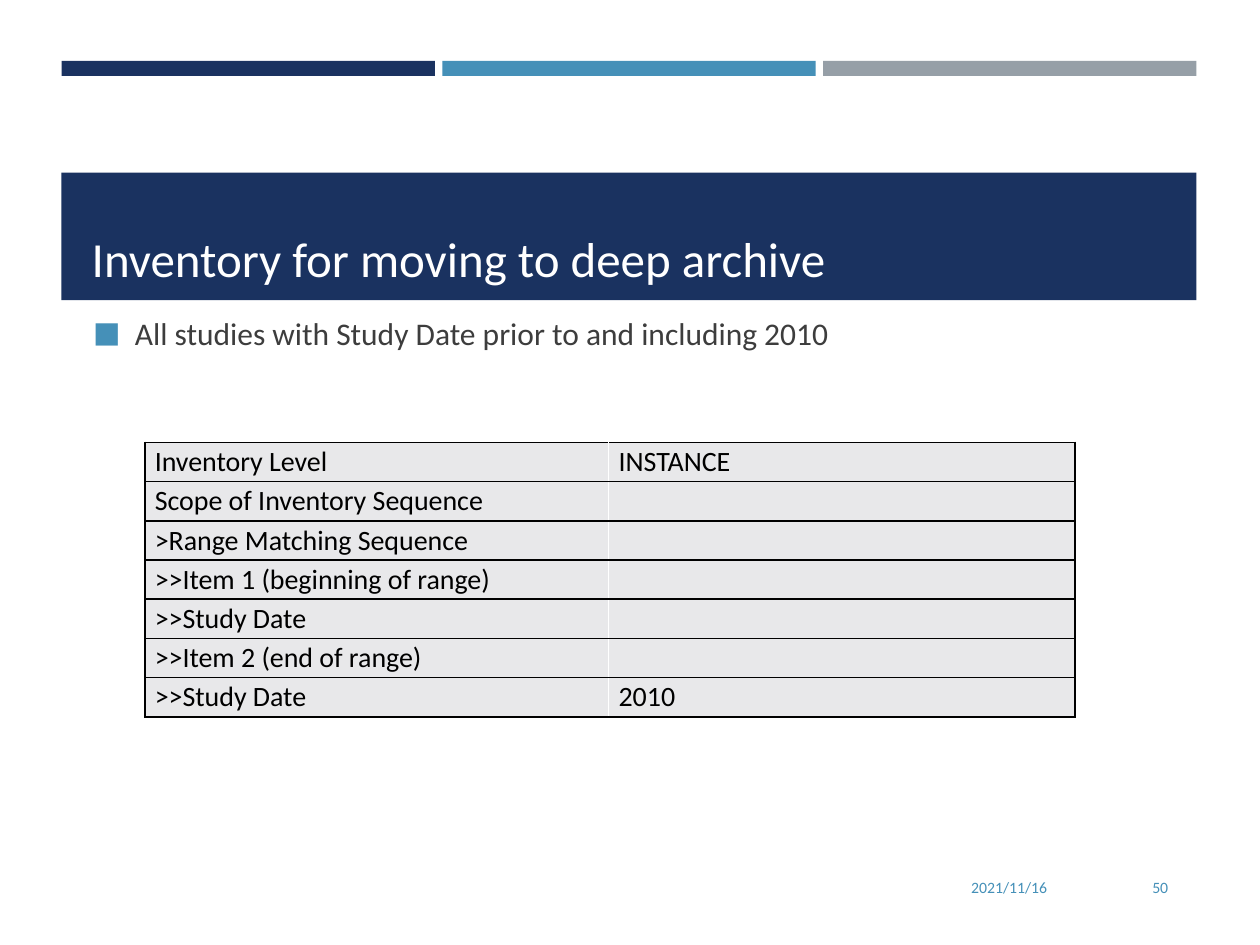
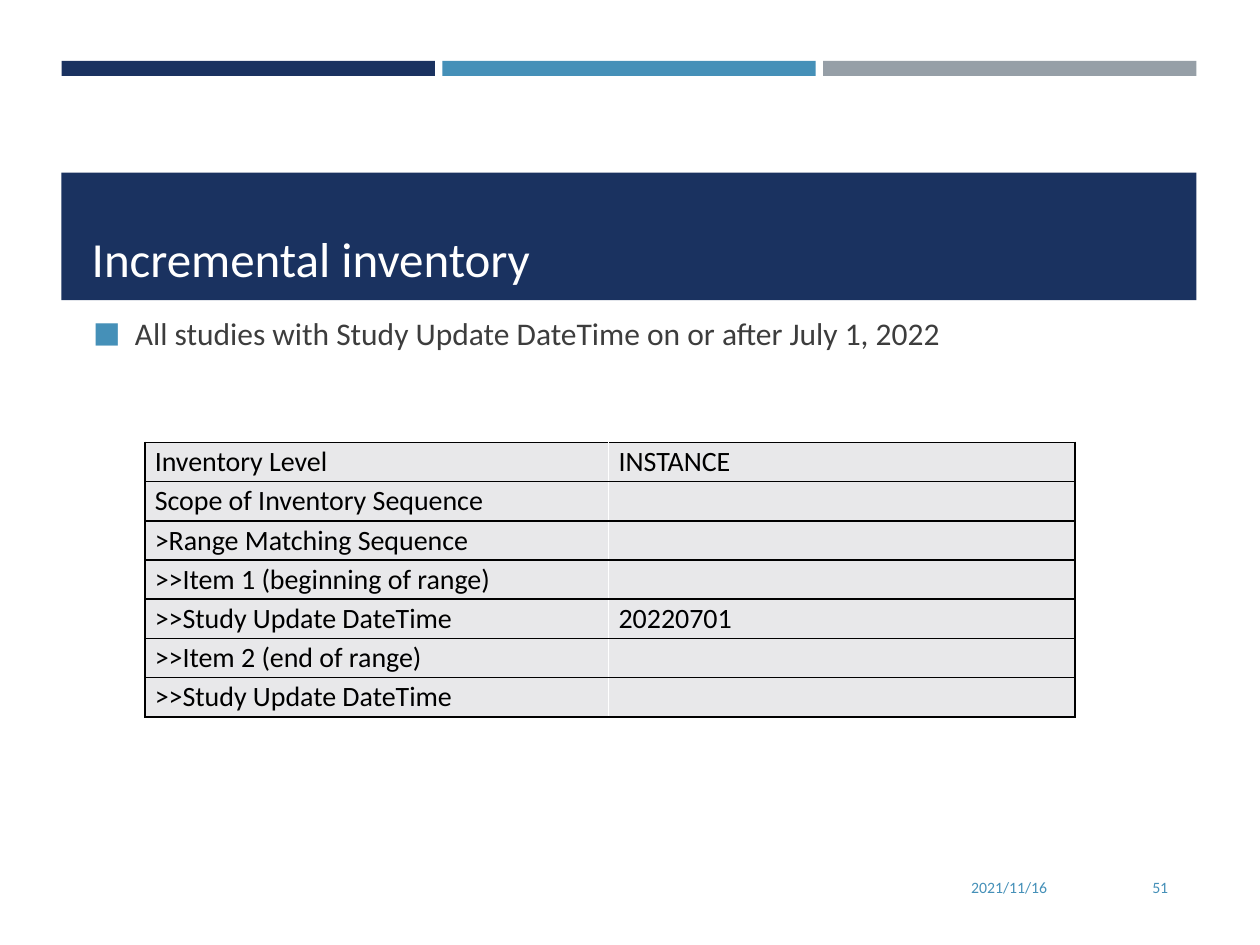
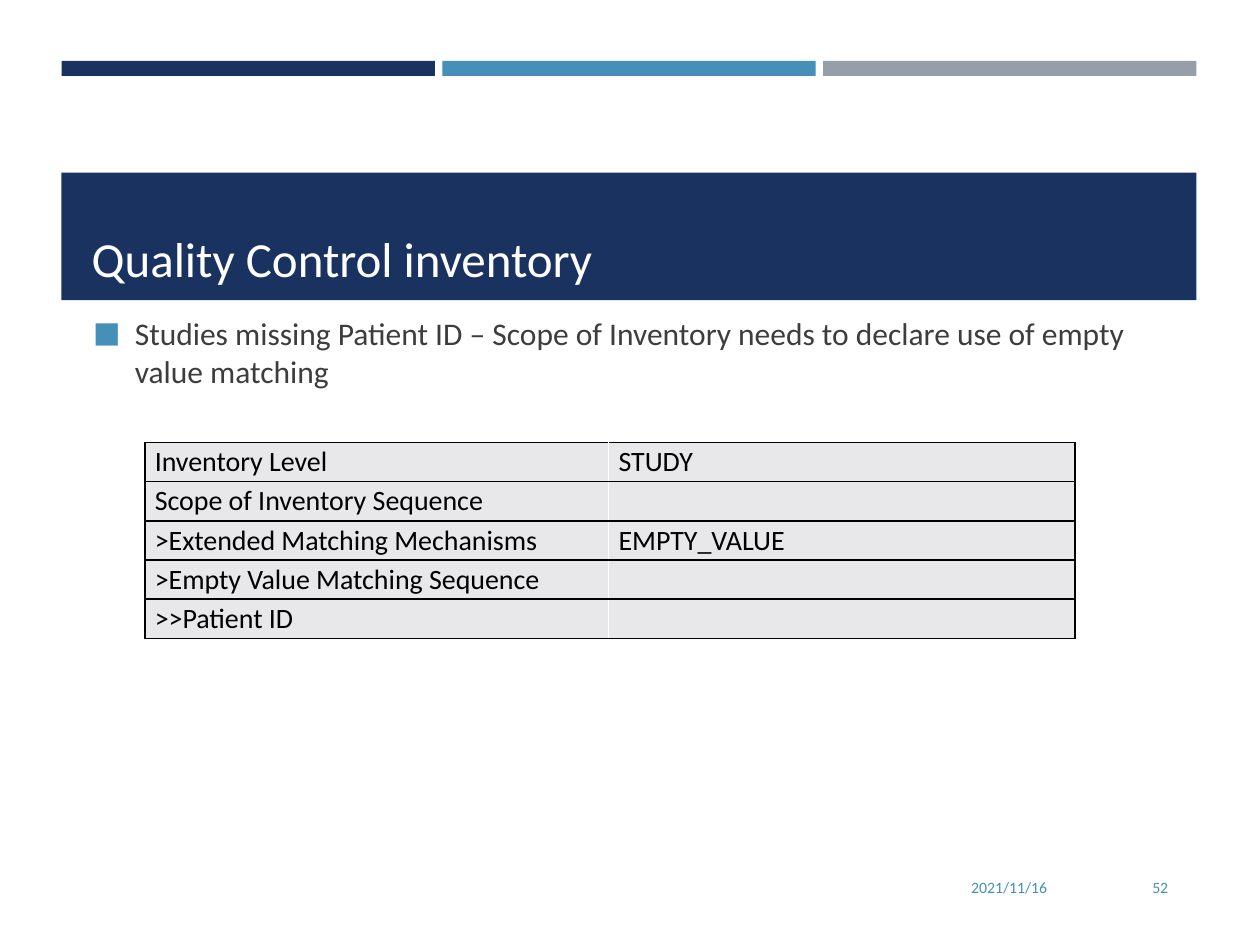
from lxml.etree import SubElement
from pptx import Presentation
from pptx.dml.color import RGBColor
from pptx.enum.shapes import MSO_SHAPE
from pptx.enum.text import MSO_ANCHOR, PP_ALIGN
from pptx.oxml.ns import qn
from pptx.util import Cm, Pt

NAVY = RGBColor(0x1A, 0x32, 0x60)
BLUE = RGBColor(0x45, 0x90, 0xB8)
GREY = RGBColor(0x96, 0x9F, 0xA7)
PALE = RGBColor(0xE8, 0xE8, 0xEA)
DARK = RGBColor(0x3D, 0x3D, 0x3D)
BLACK = RGBColor(0, 0, 0)
WHITE = RGBColor(255, 255, 255)

LEFT, WIDE, GAP = 1.24, 22.88, 0.15
DATE = "2021/11/16"
FIRST = 50

SCOPE = ("Scope of Inventory Sequence", "")
RANGE = (">Range Matching Sequence", "")
START = (">>Item 1 (beginning of range)", "")
END = (">>Item 2 (end of range)", "")

PAGES = [
    ("Inventory for moving to deep archive",
     "All studies with Study Date prior to and including 2010",
     [("Inventory Level", "INSTANCE"), SCOPE, RANGE,
      START, (">>Study Date", ""), END, (">>Study Date", "2010")]),
    ("Incremental inventory",
     "All studies with Study Update DateTime on or after July 1, 2022",
     [("Inventory Level", "INSTANCE"), SCOPE, RANGE,
      START, (">>Study Update DateTime", "20220701"),
      END, (">>Study Update DateTime", "")]),
    ("Quality Control inventory",
     "Studies missing Patient ID – Scope of Inventory needs to declare "
     "use of empty value matching",
     [("Inventory Level", "STUDY"), SCOPE,
      (">Extended Matching Mechanisms", "EMPTY_VALUE"),
      (">Empty Value Matching Sequence", ""), (">>Patient ID", "")]),
]


class Deck:
    font = "Calibri"

    def __init__(self):
        self.prs = Presentation()
        self.prs.slide_width = Cm(25.4)
        self.prs.slide_height = Cm(19.05)
        self.slide = None

    def style(self, para, size, color):
        for run in para.runs:
            run.font.name = self.font
            run.font.size = Pt(size)
            run.font.color.rgb = color

    def rect(self, x, y, w, h, color):
        shape = self.slide.shapes.add_shape(
            MSO_SHAPE.RECTANGLE, Cm(x), Cm(y), Cm(w), Cm(h))
        shape.shadow.inherit = False
        shape.fill.solid()
        shape.fill.fore_color.rgb = color
        shape.line.fill.background()

    def text(self, box, text, size, color, anchor=MSO_ANCHOR.TOP,
             align=PP_ALIGN.LEFT):
        frame = self.slide.shapes.add_textbox(*map(Cm, box)).text_frame
        frame.word_wrap = True
        frame.vertical_anchor = anchor
        frame.text = text
        para = frame.paragraphs[0]
        para.alignment = align
        self.style(para, size, color)
        return para

    def bullet(self, box, text):
        para = self.text(box, text, 18, DARK)
        props = para._p.get_or_add_pPr()
        props.set("marL", str(Cm(0.84)))
        props.set("indent", str(Cm(-0.84)))
        tint = SubElement(props, qn("a:buClr"))
        SubElement(tint, qn("a:srgbClr"), val=str(BLUE))
        SubElement(props, qn("a:buSzPct"), val="92000")
        SubElement(props, qn("a:buFont"), typeface=self.font)
        SubElement(props, qn("a:buChar"), char="■")
        para.space_after = Pt(6)

    def cell(self, cell, text, edges):
        cell.margin_left = cell.margin_right = Cm(0.2)
        cell.margin_top = cell.margin_bottom = Cm(0.05)
        cell.text = text
        para = cell.text_frame.paragraphs[0]
        self.style(para, 16, BLACK)
        if not text:
            SubElement(para._p, qn("a:endParaRPr"), sz="1600")
        props = cell._tc.get_or_add_tcPr()
        for side, color in zip("LRTB", edges):
            line = SubElement(props, qn(f"a:ln{side}"), w=str(Pt(1)))
            fill = SubElement(line, qn("a:solidFill"))
            SubElement(fill, qn("a:srgbClr"), val=str(color))
        cell.fill.solid()
        cell.fill.fore_color.rgb = PALE

    def table(self, x, y, rows, widths, high):
        table = self.slide.shapes.add_table(
            len(rows), len(widths), Cm(x), Cm(y),
            Cm(sum(widths)), Cm(high * len(rows))).table
        table.first_row = table.horz_banding = False
        for col, width in zip(table.columns, widths):
            col.width = Cm(width)
        edges = [(BLACK, WHITE, BLACK, BLACK), (WHITE, BLACK, BLACK, BLACK)]
        for r, row in enumerate(rows):
            table.rows[r].height = Cm(high)
            for c, text in enumerate(row):
                self.cell(table.cell(r, c), text, edges[c])

    def page(self, title, number):
        self.slide = self.prs.slides.add_slide(self.prs.slide_layouts[6])
        width = (WIDE - 2 * GAP) / 3
        for i, color in enumerate((NAVY, BLUE, GREY)):
            self.rect(LEFT + i * (width + GAP), 1.23, width, 0.3, color)
        self.rect(LEFT, 3.48, WIDE, 2.57, NAVY)
        self.text((1.6, 3.61, 22.2, 2.31), title, 28, WHITE,
                  MSO_ANCHOR.BOTTOM)
        for x, w, text in ((15.44, 5.92, DATE), (21.67, 2.13, str(number))):
            self.text((x, 17.37, w, 1.02), text, 9, BLUE,
                      MSO_ANCHOR.MIDDLE, PP_ALIGN.RIGHT)


def main():
    deck = Deck()
    for number, (title, note, rows) in enumerate(PAGES, FIRST):
        deck.page(title, number)
        deck.bullet((1.63, 6.2, 22.2, 2.31), note)
        deck.table(2.92, 8.92, rows, (9.35, 9.4), 0.79)
    deck.prs.save("out.pptx")


if __name__ == "__main__":
    main()
